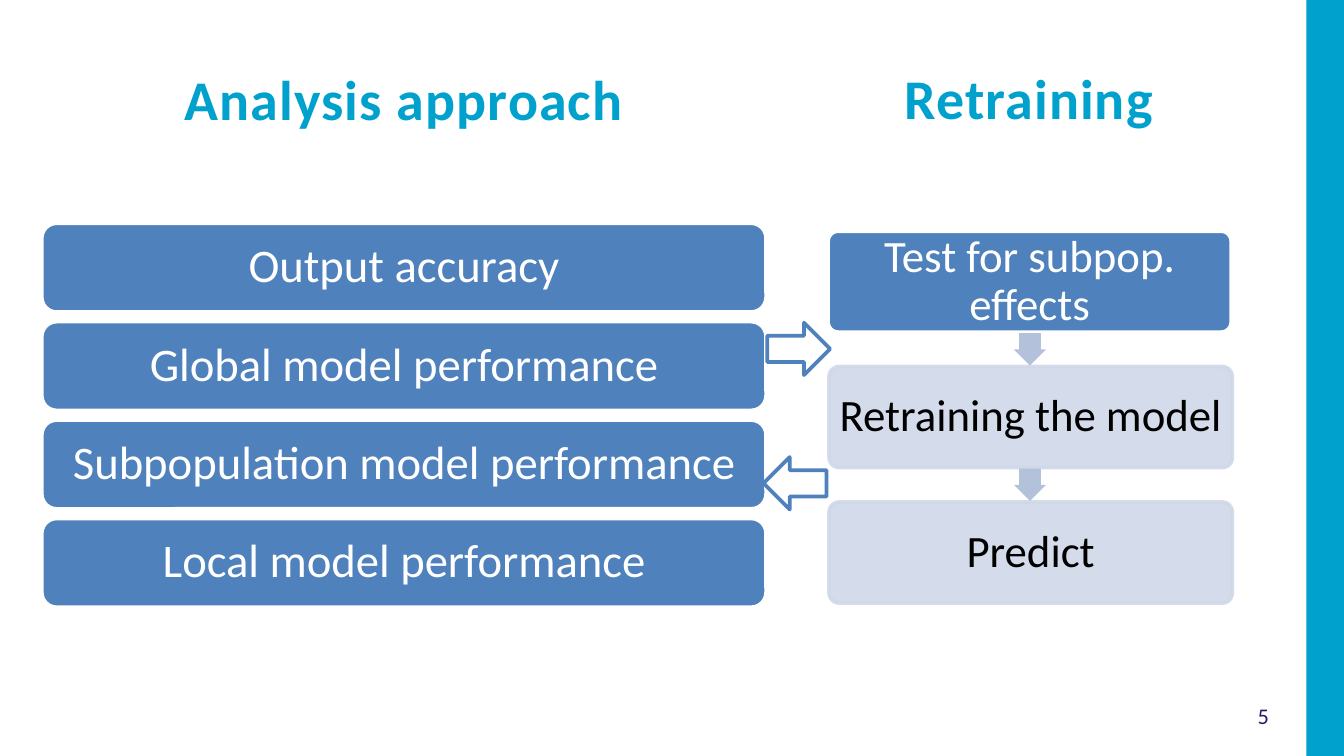
"""Build a slide linking the analysis approach to the retraining steps."""
from lxml import etree
from pptx import Presentation
from pptx.dml.color import RGBColor
from pptx.enum.shapes import MSO_SHAPE
from pptx.enum.text import MSO_ANCHOR, PP_ALIGN
from pptx.oxml.ns import qn
from pptx.util import Cm, Pt

RECTANGLE = MSO_SHAPE.RECTANGLE
ROUNDED = MSO_SHAPE.ROUNDED_RECTANGLE
RIGHT_ARROW = MSO_SHAPE.RIGHT_ARROW
MIDDLE = MSO_ANCHOR.MIDDLE
TOP = MSO_ANCHOR.TOP
CENTER = PP_ALIGN.CENTER

CYAN = RGBColor(0x00, 0xA1, 0xCD)
BLUE = RGBColor(0x4F, 0x81, 0xBD)
PALE_BLUE = RGBColor(0xD0, 0xD8, 0xE8)
ARROW_BLUE = RGBColor(0xB3, 0xC1, 0xDB)
NAVY = RGBColor(0x27, 0x1D, 0x6C)
WHITE = RGBColor(0xFF, 0xFF, 0xFF)
BLACK = RGBColor(0x00, 0x00, 0x00)

prs = Presentation()
prs.slide_width = Cm(25.4)
prs.slide_height = Cm(14.29)
slide = prs.slides.add_slide(prs.slide_layouts[6])


def add_block(kind, left, top, width, height, fill, line=None):
    block = slide.shapes.add_shape(kind, Cm(left), Cm(top), Cm(width), Cm(height))
    block.shadow.inherit = False
    block.fill.solid()
    block.fill.fore_color.rgb = fill
    if line is None:
        block.line.fill.background()
    else:
        block.line.color.rgb = line
        block.line.width = Pt(2)
    return block


def write(holder, text, size, color, anchor=MIDDLE, inset=0.25):
    frame = holder.text_frame
    frame.word_wrap = True
    frame.vertical_anchor = anchor
    frame.margin_left = frame.margin_right = Cm(inset)
    frame.margin_top = frame.margin_bottom = Cm(min(inset, 0.13))
    paragraph = frame.paragraphs[0]
    paragraph.alignment = CENTER
    run = paragraph.add_run()
    run.text = text
    run.font.name = "Calibri"
    run.font.size = Pt(size)
    run.font.color.rgb = color
    return paragraph


add_block(RECTANGLE, 24.69, 0, 0.71, 14.29, CYAN)

page_number = slide.shapes.add_textbox(Cm(23.06), Cm(13.08), Cm(1.63), Cm(0.89))
write(page_number, "5", 12, NAVY)

for heading, left, top, width in (
    ("Analysis approach", 0.79, 1.09, 13.69),
    ("Retraining", 15.62, 1.07, 7.65),
):
    heading_box = slide.shapes.add_textbox(Cm(left), Cm(top), Cm(width), Cm(1.4))
    heading_run = write(heading_box, heading, 30, CYAN, TOP).runs[0]
    heading_run.font.bold = True
    heading_run.font._element.set("spc", "60")

analyses = (
    "Output accuracy",
    "Global model performance",
    "Subpopulation model performance",
    "Local model performance",
)
for row, analysis in enumerate(analyses):
    level = add_block(ROUNDED, 0.79, 4.22 + 1.86 * row, 13.69, 1.68, BLUE, WHITE)
    write(level, analysis, 25, WHITE).line_spacing = 0.9

steps = (
    ("Test for subpop. effects", 15.65, BLUE, WHITE, WHITE),
    ("Retraining the model", 15.67, PALE_BLUE, PALE_BLUE, BLACK),
    ("Predict", 15.67, PALE_BLUE, PALE_BLUE, BLACK),
)
for row, (label, left, fill, outline, ink) in enumerate(steps):
    step = add_block(ROUNDED, left, 4.37 + 2.56 * row, 7.62, 1.91, fill, outline)
    step.adjustments[0] = 0.1
    write(step, label, 24, ink, inset=0.08).line_spacing = 0.9
    if fill == PALE_BLUE:
        for tint in step._element.spPr.iter(qn("a:srgbClr")):
            etree.SubElement(tint, qn("a:alpha"), val="90000")

for row in range(len(steps) - 1):
    next_step = add_block(RIGHT_ARROW, 19.16, 6.3 + 2.56 * row, 0.61, 0.61, ARROW_BLUE)
    next_step.adjustments[0] = 0.67
    next_step.rotation = 90

for left, top, angle in ((14.5, 6.1, 0), (14.43, 8.64, 180)):
    exchange = add_block(RIGHT_ARROW, left, top, 1.19, 0.99, WHITE, BLUE)
    exchange.rotation = angle

prs.save("out.pptx")
